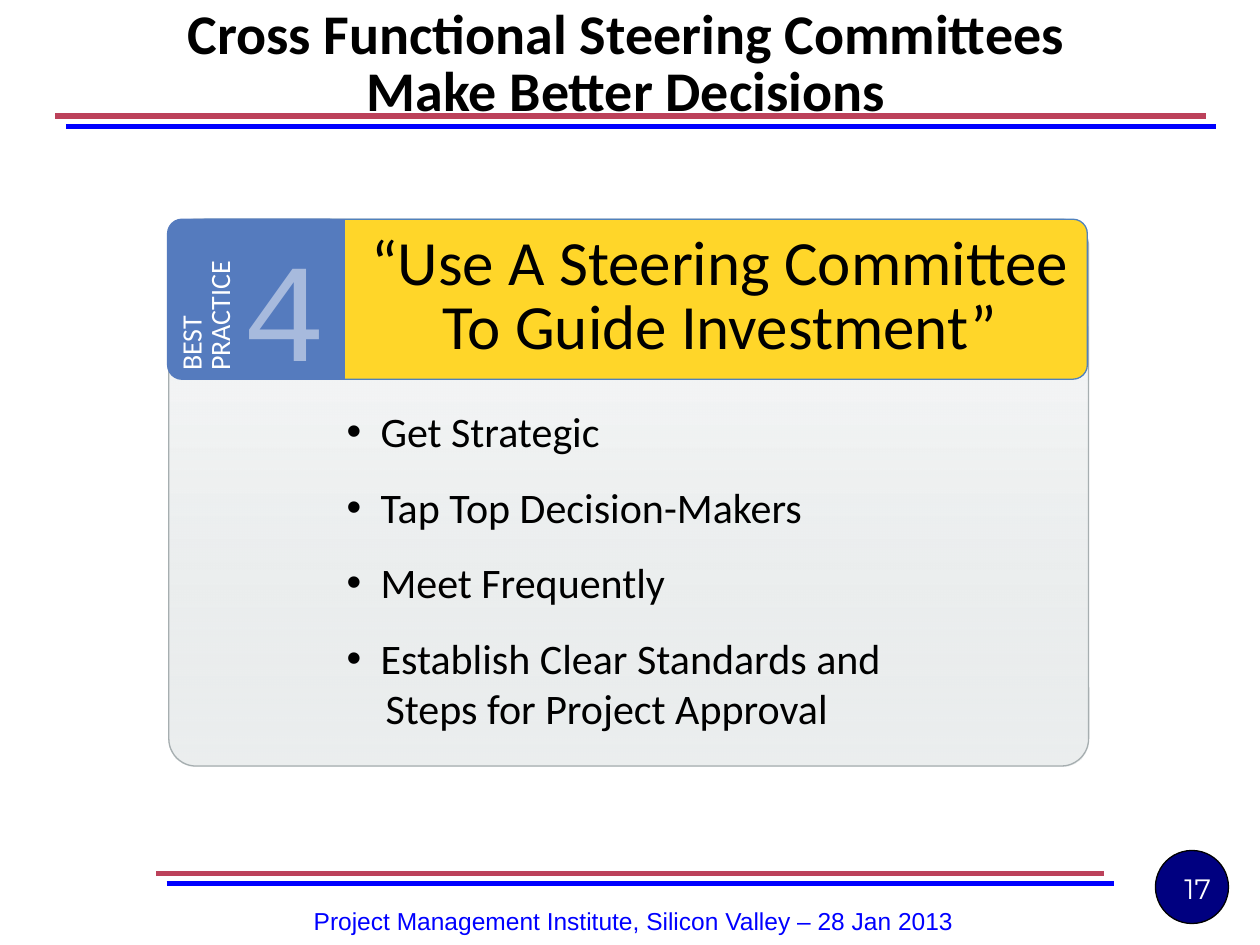
from dataclasses import dataclass

from lxml.etree import SubElement
from pptx import Presentation
from pptx.dml.color import RGBColor
from pptx.enum.shapes import MSO_CONNECTOR, MSO_SHAPE
from pptx.enum.text import MSO_ANCHOR, MSO_AUTO_SIZE, PP_ALIGN
from pptx.oxml.ns import qn
from pptx.util import Inches, Pt


@dataclass(frozen=True)
class Theme:
    black: str = "000000"
    white: str = "FFFFFF"
    blue: str = "0000FF"
    red: str = "BC415A"
    navy: str = "000080"
    gold: str = "FFD629"
    gold_edge: str = "4F81BD"
    badge: str = "557BBE"
    numeral: str = "A7BADD"
    panel: str = "CED5D6"
    panel_edge: str = "A6AEB0"
    face: str = "Calibri"
    title: int = 32
    quote: int = 36
    body: int = 24
    small: int = 16
    footer: int = 14
    number: int = 80


theme = Theme()
color = RGBColor.from_string
deck = Presentation()
deck.slide_width, deck.slide_height = Inches(10), Inches(7.5)
COLUMN = deck.slide_width / 100
ROW = deck.slide_height / 75
page = deck.slides.add_slide(deck.slide_layouts[1])
shapes = page.shapes


def cells(left, top, width, height):
    """Turn grid columns and rows into slide lengths."""
    return [round(n * unit) for n, unit in
            zip((left, top, width, height), (COLUMN, ROW, COLUMN, ROW))]


def write(box, lines, size, ink, face=theme.face, bold=False,
          align=PP_ALIGN.LEFT, spacing=1.0, wrap=True):
    frame = box.text_frame
    frame.word_wrap = wrap
    frame.auto_size = MSO_AUTO_SIZE.NONE
    frame.vertical_anchor = MSO_ANCHOR.TOP
    for index, line in enumerate(lines):
        para = frame.add_paragraph() if index else frame.paragraphs[0]
        para.alignment = align
        para.line_spacing = spacing
        para.space_before = para.space_after = Pt(0)
        span = para.add_run()
        span.text = line
        span.font.name, span.font.size, span.font.bold = face, Pt(size), bold
        span.font.color.rgb = color(ink)


# Footer and page number
footer = shapes.add_textbox(*cells(13.1, 70.5, 74.4, 5.2))
write(footer, ["Project Management Institute, Silicon Valley – 28 Jan 2013"],
      theme.footer, theme.blue, "Arial", align=PP_ALIGN.CENTER)
footer.text_frame.vertical_anchor = MSO_ANCHOR.MIDDLE

# Red rules, each with a hard blue shadow
for start, end, row in ((12.4, 87.6, 69.3), (4.4, 95.7, 9.2)):
    left, top, right, bottom = cells(start, row, end, row)
    rule = shapes.add_connector(MSO_CONNECTOR.STRAIGHT, left, top, right, bottom)
    rule.line.color.rgb = color(theme.red)
    rule.line.width = Pt(3)
    effects = SubElement(rule.element.spPr, qn("a:effectLst"))
    shadow = SubElement(effects, qn("a:outerShdw"), dist=str(Pt(8.5)),
                        dir="2700000", algn="ctr", rotWithShape="0")
    SubElement(shadow, qn("a:srgbClr"), val=theme.blue)

# Page disc, panel, heading bar and the two halves of the badge
panel_place = cells(13.4, 17.4, 73, 43.4)
badge = shapes.add_group_shape()
blocks = (
    (shapes, MSO_SHAPE.OVAL, cells(91.7, 67.5, 5.8, 5.8), None, theme.navy, theme.black),
    (shapes, MSO_SHAPE.ROUNDED_RECTANGLE, panel_place, 0.05, None, theme.panel_edge),
    (shapes, MSO_SHAPE.ROUNDED_RECTANGLE, cells(15.2, 17.4, 71.1, 12.7), 0.09,
     theme.gold, theme.gold_edge),
    (badge.shapes, MSO_SHAPE.ROUNDED_RECTANGLE, cells(13.3, 17.4, 13.9, 12.7), 0.09,
     theme.badge, theme.badge),
    (badge.shapes, MSO_SHAPE.RECTANGLE, cells(25.4, 17.4, 1.9, 12.7), None,
     theme.badge, theme.badge),
)
for parent, kind, place, corner, fill, edge in blocks:
    block = parent.add_shape(kind, *place)
    block.shadow.inherit = False
    block.line.color.rgb = color(edge)
    block.line.width = Pt(0.75)
    if corner:
        block.adjustments[0] = corner
    if fill:
        block.fill.solid()
        block.fill.fore_color.rgb = color(fill)
    else:
        block.fill.gradient()
        block.fill.gradient_angle = 270
        for stop, tint in zip(block.fill.gradient_stops, (theme.white, theme.panel)):
            stop.color.rgb = color(tint)
        last_stop = block.element.spPr.findall(".//" + qn("a:srgbClr"))[1]
        SubElement(last_stop, qn("a:alpha"), val="39000")
tree = badge.element.getparent()
tree.append(badge.element)

# Texts on the blocks
page_number = shapes.add_textbox(*cells(73.8, 68.7, 23.3, 5.2))
write(page_number, ["17"], theme.small, theme.white, "Montserrat", align=PP_ALIGN.RIGHT)

label = shapes.add_textbox(*cells(9.9, 21, 13.2, 5.6))
label.rotation = 270
write(label, ["BEST", "PRACTICE"], theme.small, theme.white, spacing=0.85)

numeral = shapes.add_textbox(*cells(18.3, 17.1, 10.9, 14.3))
write(numeral, ["4"], theme.number, theme.numeral, "Courier New")

quote = shapes.add_textbox(*cells(27.6, 18.1, 59.1, 11.3))
write(quote, ["“Use A Steering Committee", "To Guide Investment”"], theme.quote,
      theme.black, align=PP_ALIGN.CENTER, spacing=0.85, wrap=False)

# Bulleted list; its last line continues the fourth bullet
body = page.placeholders[1]
body.left, body.top, body.width, body.height = cells(26.5, 31.7, 58.6, 28.5)
write(body, ["Get Strategic", "Tap Top Decision-Makers", "Meet Frequently",
             "Establish Clear Standards and", "Steps for Project Approval"],
      theme.body, theme.black)
for index, para in enumerate(body.text_frame.paragraphs):
    props = para._p.get_or_add_pPr()
    bulleted = index < 4
    props.set("marL", str(Inches(0.27 if bulleted else 0.31)))
    props.set("indent", str(Inches(-0.27 if bulleted else 0)))
    if bulleted:
        SubElement(props, qn("a:buFont"), typeface="Arial")
        SubElement(props, qn("a:buChar"), char="•")
    else:
        SubElement(props, qn("a:buNone"))
    if index < 3:
        para.space_after = Pt(0.6 * theme.body)
tree.append(body.element)

title = shapes.title
title.left, title.top, title.width, title.height = cells(13.5, 0.1, 72.4, 10.3)
write(title, ["Cross Functional Steering Committees", "Make Better Decisions"],
      theme.title, theme.black, bold=True, align=PP_ALIGN.CENTER,
      spacing=Pt(33), wrap=False)
tree.append(title.element)

deck.save("out.pptx")
